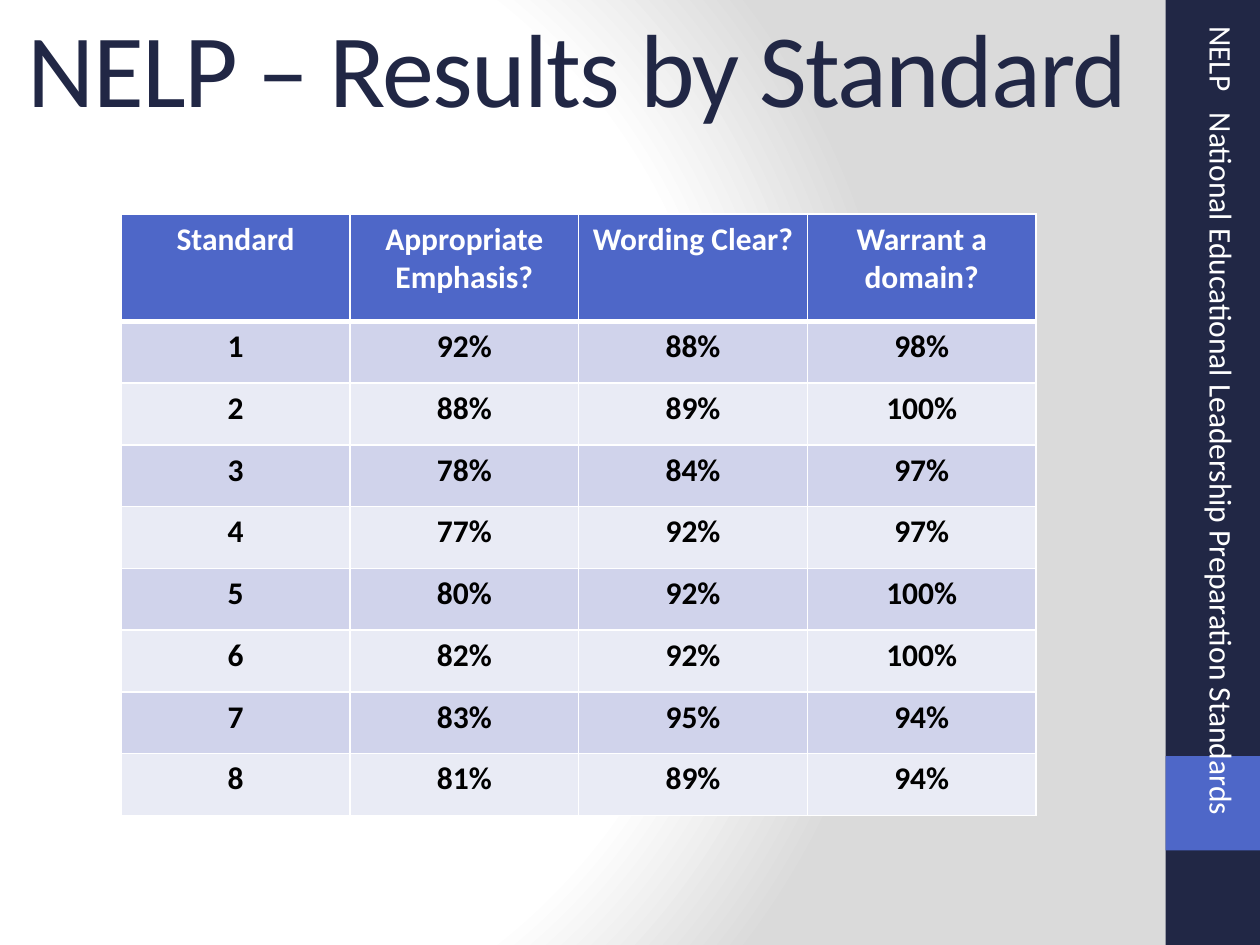
from dataclasses import dataclass

from pptx import Presentation
from pptx.dml.color import RGBColor
from pptx.enum.shapes import MSO_SHAPE
from pptx.enum.text import MSO_ANCHOR, MSO_AUTO_SIZE, PP_ALIGN
from pptx.oxml import parse_xml
from pptx.oxml.ns import nsdecls, qn
from pptx.util import Pt

RECT = MSO_SHAPE.RECTANGLE
CENTER = PP_ALIGN.CENTER
TOP, BOTTOM = MSO_ANCHOR.TOP, MSO_ANCHOR.BOTTOM
NO_FIT = MSO_AUTO_SIZE.NONE

NAVY = RGBColor(0x21, 0x27, 0x45)
BLUE = RGBColor(0x4E, 0x67, 0xC8)
WHITE = RGBColor(0xFF, 0xFF, 0xFF)
BLACK = RGBColor(0, 0, 0)
GRAY = RGBColor(0xDA, 0xDA, 0xDA)
BAND_DARK = RGBColor(0xD0, 0xD3, 0xEB)
BAND_LIGHT = RGBColor(0xE9, 0xEB, 0xF5)

FONT = "Calibri"
COL_W, HEAD_H, ROW_H = 130.7, 61.2, 35.3

HEADERS = ("Standard", "Appropriate Emphasis?", "Wording Clear?", "Warrant a domain?")
# Emphasis, wording and domain percentages for standards 1 to 8
RESULTS = (
    (92, 88, 98),
    (88, 89, 100),
    (78, 84, 97),
    (77, 92, 97),
    (80, 92, 100),
    (82, 92, 100),
    (83, 95, 94),
    (81, 89, 94),
)


@dataclass
class Band:
    top: float
    height: float
    color: RGBColor


SIDEBAR = (Band(0, 540, NAVY), Band(432, 54, BLUE))


def set_background(s) -> None:
    s.background.fill.solid()
    bg = s.element.find(".//" + qn("p:bgPr"))
    stops = "".join(
        f'<a:gs pos="{pos}000"><a:srgbClr val="{color}"/></a:gs>'
        for pos, color in ((0, WHITE), (75, WHITE), (100, GRAY))
    )
    bg.replace(bg[0], parse_xml(
        f'<a:gradFill {nsdecls("a")} rotWithShape="1"><a:gsLst>{stops}</a:gsLst>'
        '<a:path path="circle"><a:fillToRect l="20000" t="50000" r="100000" b="50000"/>'
        "</a:path></a:gradFill>"
    ))


def draw_band(s, band: Band) -> None:
    sp = s.shapes.add_shape(RECT, Pt(666), Pt(band.top), Pt(54), Pt(band.height))
    sp.shadow.inherit = False
    sp.fill.solid()
    sp.fill.fore_color.rgb = band.color
    sp.line.fill.background()


def style(p, size: float, color: RGBColor, bold: bool = False) -> None:
    p.font.name, p.font.size, p.font.bold = FONT, Pt(size), bold
    p.font.color.rgb = color


def set_borders(cell, bottom: float) -> None:
    tc_pr = cell._tc.get_or_add_tcPr()
    widths = {"lnL": 1, "lnR": 1, "lnT": 1, "lnB": bottom}
    for i, (side, width) in enumerate(widths.items()):
        tc_pr.insert(i, parse_xml(
            f'<a:{side} {nsdecls("a")} w="{Pt(width)}"><a:solidFill>'
            f'<a:srgbClr val="{WHITE}"/></a:solidFill></a:{side}>'
        ))


def fill_cell(cell, text: str, fill: RGBColor, color: RGBColor, bottom: float) -> None:
    cell.fill.solid()
    cell.fill.fore_color.rgb = fill
    cell.vertical_anchor = TOP
    p = cell.text_frame.paragraphs[0]
    p.text, p.alignment = text, CENTER
    style(p, 18, color, bold=True)
    set_borders(cell, bottom)


def draw_table(s) -> None:
    rows = [HEADERS] + [
        (str(n), *(f"{value}%" for value in values))
        for n, values in enumerate(RESULTS, 1)
    ]
    table = s.shapes.add_table(
        len(rows), len(HEADERS), Pt(69.3), Pt(122.4),
        Pt(COL_W * len(HEADERS)), Pt(HEAD_H + ROW_H * len(RESULTS)),
    ).table
    for col in table.columns:
        col.width = Pt(COL_W)
    for i, row in enumerate(rows):
        table.rows[i].height = Pt(ROW_H if i else HEAD_H)
        fill = BLUE if i == 0 else BAND_DARK if i % 2 else BAND_LIGHT
        for j, text in enumerate(row):
            fill_cell(table.cell(i, j), text, fill,
                      BLACK if i else WHITE, 1 if i else 3)


def draw_title(s) -> None:
    sp = s.shapes.title
    sp.left, sp.top, sp.width, sp.height = Pt(0), Pt(17.3), Pt(660), Pt(56.2)
    tf = sp.text_frame
    tf.auto_size, tf.vertical_anchor, tf.margin_bottom = NO_FIT, BOTTOM, 0
    p = tf.paragraphs[0]
    p.alignment = CENTER
    r = p.add_run()
    r.text = "NELP – Results by Standard"
    style(p, 59.4, NAVY)
    r.font._element.set("spc", "-100")


def draw_side_label(s) -> None:
    sp = s.shapes.add_textbox(Pt(676.8), Pt(7.9), Pt(36), Pt(468))
    sp.rotation = 180
    tf = sp.text_frame
    tf.word_wrap = False
    tf._txBody.bodyPr.set("vert", "vert270")
    p = tf.paragraphs[0]
    p.text = "NELP   National Educational Leadership Preparation Standards"
    style(p, 18, WHITE)


def main() -> None:
    prs = Presentation()
    prs.slide_width, prs.slide_height = Pt(720), Pt(540)
    s = prs.slides.add_slide(prs.slide_layouts[5])
    set_background(s)
    # Sidebar
    for band in SIDEBAR:
        draw_band(s, band)
    draw_side_label(s)
    # Content
    draw_title(s)
    draw_table(s)
    prs.save("out.pptx")


if __name__ == "__main__":
    main()
